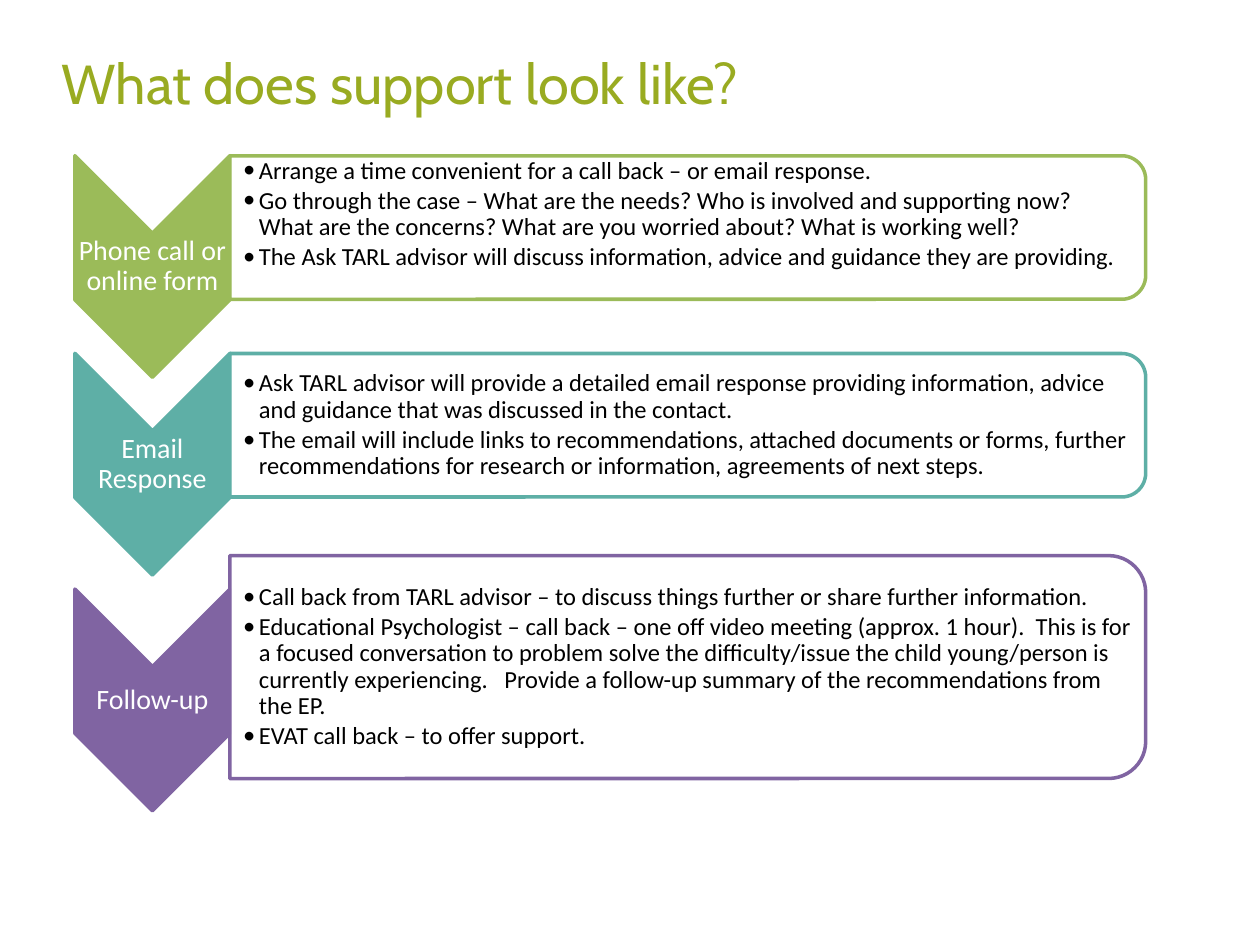
from lxml import etree
from pptx import Presentation
from pptx.dml.color import RGBColor
from pptx.enum.shapes import MSO_SHAPE
from pptx.enum.text import MSO_ANCHOR, PP_ALIGN
from pptx.oxml.ns import qn
from pptx.util import Pt

CHEVRON = MSO_SHAPE.CHEVRON
PANEL = MSO_SHAPE.ROUND_2_SAME_RECTANGLE
MIDDLE = MSO_ANCHOR.MIDDLE
LEFT, CENTER = PP_ALIGN.LEFT, PP_ALIGN.CENTER

# Columns shared by all steps, in points
CHEVRON_X, CHEVRON_LENGTH, CHEVRON_WIDTH = 87.1, 126.7, 88.6
PANEL_X, PANEL_WIDTH = 393, 523.4
TEXT_LEFT = 131

# Label, colour, chevron centre, panel centre, panel height,
# text width, space under the text, bullets
STEPS = [
    ("Phone call or online form", "9BBB59", 152.3, 130, 82, 520, 16, [
        "Arrange a time convenient for a call back – or email response.",
        "Go through the case – What are the needs? Who is involved and supporting now?\v"
        "What are the concerns? What are you worried about? What is working well?",
        "The Ask TARL advisor will discuss information, advice and guidance they are providing.",
    ]),
    ("Email Response", "5EAFA6", 265.3, 243, 82, 520, 1, [
        "Ask TARL advisor will provide a detailed email response providing information, "
        "advice and guidance that was discussed in the contact.",
        "The email will include links to recommendations, attached documents or forms, "
        "further recommendations for research or information, agreements of next steps.",
    ]),
    ("Follow-up", "8064A2", 400, 381.2, 127.4, 517.7, 1, [
        "Call back from TARL advisor – to discuss things further or share further information.",
        "Educational Psychologist – call back – one off video meeting (approx. 1 hour).  "
        "This is for a focused conversation to problem solve the difficulty/issue the child "
        "young/person is currently experiencing.   Provide a follow-up summary of the "
        "recommendations from the EP.",
        "EVAT call back – to offer support.",
    ]),
]


def color(value):
    return RGBColor.from_string(value)


class SlideBuilder:
    body_font = "Calibri"
    title_font = "Cabin"
    title_color = "99AB21"

    def __init__(self, slide):
        self.slide = slide

    def rotated_shape(self, kind, center_x, center_y, length, breadth, fill, line):
        """Add a shape turned a quarter clockwise about its centre."""
        shape = self.slide.shapes.add_shape(
            kind, Pt(center_x - length / 2), Pt(center_y - breadth / 2),
            Pt(length), Pt(breadth))
        shape.rotation = 90
        shape.shadow.inherit = False
        shape.fill.solid()
        shape.fill.fore_color.rgb = color(fill)
        shape.line.color.rgb = color(line)
        shape.line.width = Pt(2)
        return shape

    def text(self, left, center_y, width, height, paragraphs, size, font, ink,
             align=LEFT, spacing=0.9, insets=(1, 1, 1, 1), gap=0):
        box = self.slide.shapes.add_textbox(
            Pt(left), Pt(center_y - height / 2), Pt(width), Pt(height))
        frame = box.text_frame
        frame.word_wrap = True
        frame.vertical_anchor = MIDDLE
        (frame.margin_left, frame.margin_top,
         frame.margin_right, frame.margin_bottom) = map(Pt, insets)
        frame.text = "\n".join(paragraphs)
        for paragraph in frame.paragraphs:
            paragraph.alignment = align
            paragraph.line_spacing = spacing
            paragraph.space_after = Pt(gap)
            for run in paragraph.runs:
                run.font.size = Pt(size)
                run.font.name = font
                run.font.color.rgb = color(ink)
        return frame

    def title(self, text):
        self.text(28, 47, 648, 62.6, [text], 32, self.title_font,
                  self.title_color, spacing=1, insets=(7.2, 3.6, 7.2, 3.6))

    def chevron(self, label, center_y, fill):
        self.rotated_shape(CHEVRON, CHEVRON_X, center_y,
                           CHEVRON_LENGTH, CHEVRON_WIDTH, fill, fill)
        self.text(CHEVRON_X - CHEVRON_WIDTH / 2, center_y, CHEVRON_WIDTH, 38,
                  [label], 16, self.body_font, "FFFFFF", align=CENTER)

    def panel(self, bullets, center_y, height, line, text_width, space_below):
        shape = self.rotated_shape(PANEL, PANEL_X, center_y,
                                   height, PANEL_WIDTH, "FFFFFF", line)
        fill = shape.fill._xPr.find(qn("a:solidFill"))
        etree.SubElement(fill[0], qn("a:alpha"), val="90000")
        frame = self.text(TEXT_LEFT, center_y, text_width, height - 8, bullets, 14,
                          self.body_font, "000000",
                          insets=(8, 1, 1, space_below), gap=2)
        for paragraph in frame.paragraphs:
            properties = paragraph._p.get_or_add_pPr()
            properties.set("marL", str(Pt(9)))
            properties.set("indent", str(Pt(-9)))
            etree.SubElement(properties, qn("a:buFont"), typeface=self.body_font)
            etree.SubElement(properties, qn("a:buChar"), char="•")


def main():
    presentation = Presentation()
    presentation.slide_width, presentation.slide_height = Pt(720), Pt(540)
    builder = SlideBuilder(presentation.slides.add_slide(presentation.slide_layouts[6]))

    # Steps
    for label, accent, chevron_y, panel_y, height, width, below, bullets in STEPS:
        builder.chevron(label, chevron_y, accent)
        builder.panel(bullets, panel_y, height, accent, width, below)

    # Title
    builder.title("What does support look like?")

    presentation.save("out.pptx")


if __name__ == "__main__":
    main()
